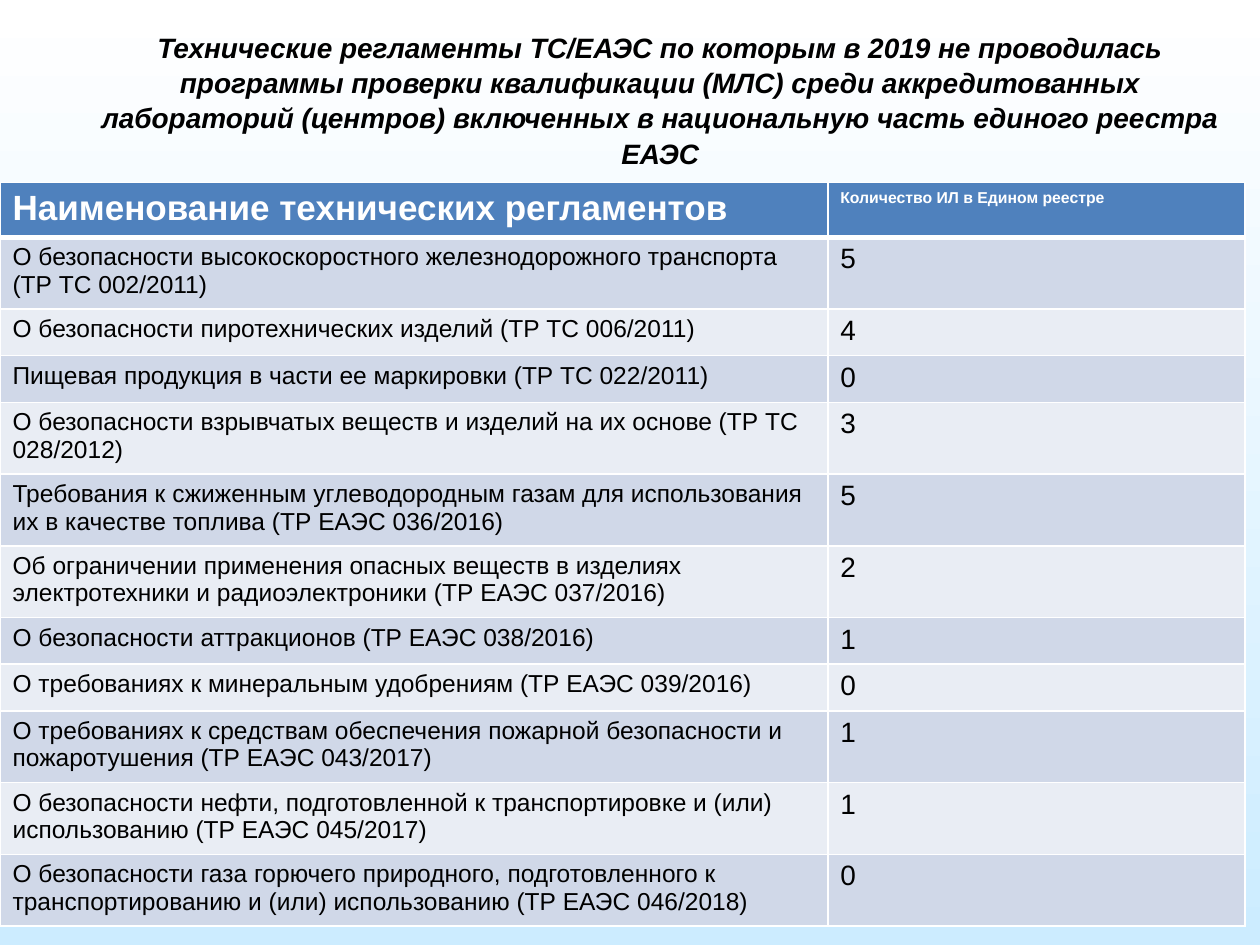
from lxml import etree
from pptx import Presentation
from pptx.dml.color import RGBColor
from pptx.enum.text import PP_ALIGN
from pptx.oxml.ns import qn
from pptx.util import Inches, Pt


def color(hex_code):
    return RGBColor.from_string(hex_code)


def add_border(cell, side, points):
    line = etree.SubElement(cell._tc.get_or_add_tcPr(), qn(f"a:ln{side}"), w=str(Pt(points)))
    fill = etree.SubElement(line, qn("a:solidFill"))
    etree.SubElement(fill, qn("a:srgbClr"), val="FFFFFF")


regulations = [
    ("Наименование технических регламентов", "Количество ИЛ в Едином реестре", 0.42),
    ("О безопасности высокоскоростного железнодорожного транспорта (ТР ТС 002/2011)", "5", 0.57),
    ("О безопасности пиротехнических изделий (ТР ТС 006/2011)", "4", 0.37),
    ("Пищевая продукция в части ее маркировки (ТР ТС 022/2011)", "0", 0.37),
    ("О безопасности взрывчатых веществ и изделий на их основе (ТР ТС 028/2012)", "3", 0.57),
    ("Требования к сжиженным углеводородным газам для использования их в качестве топлива "
     "(ТР ЕАЭС 036/2016)", "5", 0.57),
    ("Об ограничении применения опасных веществ в изделиях электротехники и радиоэлектроники "
     "(ТР ЕАЭС 037/2016)", "2", 0.57),
    ("О безопасности аттракционов (ТР ЕАЭС 038/2016)", "1", 0.37),
    ("О требованиях к минеральным удобрениям (ТР ЕАЭС 039/2016)", "0", 0.37),
    ("О требованиях к средствам обеспечения пожарной безопасности и пожаротушения "
     "(ТР ЕАЭС 043/2017)", "1", 0.57),
    ("О безопасности нефти, подготовленной к транспортировке и (или) использованию "
     "(ТР ЕАЭС 045/2017)", "1", 0.57),
    ("О безопасности газа горючего природного, подготовленного к транспортированию "
     "и (или) использованию (ТР ЕАЭС 046/2018)", "0", 0.57),
]

prs = Presentation()
prs.slide_width, prs.slide_height = Inches(10), Inches(7.5)
slide = prs.slides.add_slide(prs.slide_layouts[6])

background = slide.background.fill
background.gradient()
background.gradient_angle = 270
for stop, hex_code in zip(background.gradient_stops, ("FFFFFF", "CCECFF")):
    stop.color.rgb = color(hex_code)

title = slide.shapes.add_textbox(Inches(0.59), Inches(0.18), Inches(9.3), Inches(1.18)).text_frame
title.word_wrap = True
heading = title.paragraphs[0]
heading.text = (
    "Технические регламенты ТС/ЕАЭС по которым в 2019 не проводилась программы проверки "
    "квалификации (МЛС) среди аккредитованных лабораторий (центров) включенных в национальную "
    "часть единого реестра ЕАЭС"
)
heading.alignment = PP_ALIGN.CENTER
heading.line_spacing = 1.05
heading.font.name = "Arial"
heading.font.size = Pt(16)
heading.font.bold = heading.font.italic = True
heading.font.color.rgb = color("000000")

table = slide.shapes.add_table(
    len(regulations), 2, Inches(0), Inches(1.45), Inches(9.88), Inches(5.89)
).table
table.columns[0].width = Inches(6.57)
table.columns[1].width = Inches(3.31)

for row, (regulation, lab_count, height) in enumerate(regulations):
    table.rows[row].height = Inches(height)
    is_header = row == 0
    sizes = (20, 9) if is_header else (14, 16)
    row_fill = "4F81BD" if is_header else ("E9EDF4", "D0D8E8")[row % 2]
    for column, text in enumerate((regulation, lab_count)):
        cell = table.cell(row, column)
        for side in "LRTB":
            below_header = (row, side) in ((0, "B"), (1, "T"))
            add_border(cell, side, 3 if below_header else 1)
        cell.fill.solid()
        cell.fill.fore_color.rgb = color(row_fill)
        cell.text = text
        paragraph = cell.text_frame.paragraphs[0]
        paragraph.alignment = PP_ALIGN.LEFT
        paragraph.font.name = "Arial"
        paragraph.font.size = Pt(sizes[column])
        paragraph.font.bold = is_header
        paragraph.font.color.rgb = color("FFFFFF" if is_header else "000000")

prs.save("out.pptx")
